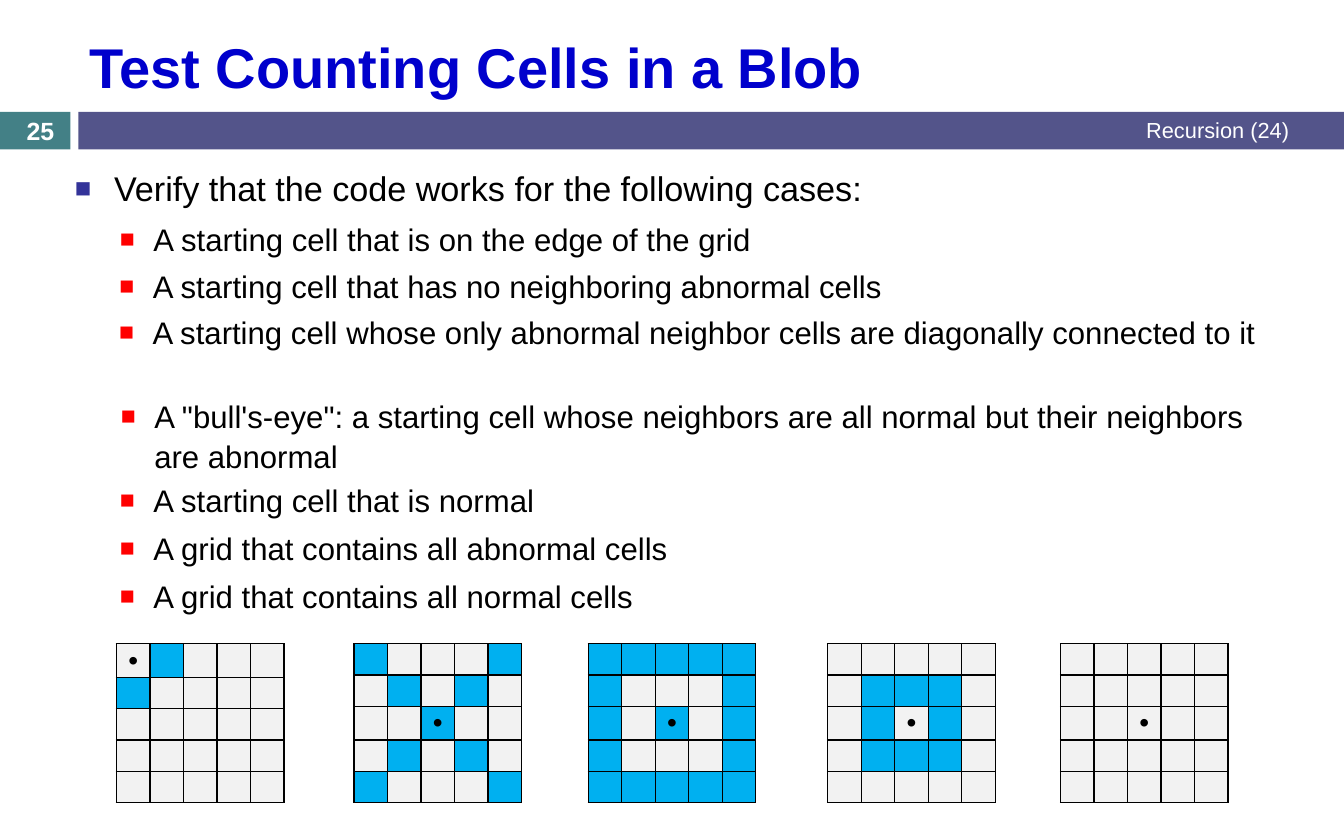
from typing import NamedTuple

from pptx import Presentation
from pptx.dml.color import RGBColor
from pptx.enum.shapes import MSO_SHAPE
from pptx.enum.text import MSO_ANCHOR, PP_ALIGN
from pptx.oxml import parse_xml
from pptx.oxml.ns import nsdecls
from pptx.util import Cm, Pt

FONT = "Arial"
BLACK, WHITE = "000000", "FFFFFF"
FILLS = {"#": "00B0F0", ".": "F2F2F2"}
SIDE = 5


class Box(NamedTuple):
    left: float
    top: float
    width: float
    height: float


class Style(NamedTuple):
    size: float
    color: str = BLACK
    bold: bool = False


class Level(NamedTuple):
    margin: float
    hang: float
    before: float
    color: str
    style: Style


class Block(NamedTuple):
    box: Box
    level: Level
    lines: list[str]


class Grid(NamedTuple):
    left: float
    rows: str
    start: tuple[int, int] = (2, 2)


MAIN = Level(0.89, 0.89, 7, "333399", Style(22))
SUB = Level(1.78, 0.76, 5.5, "FF0000", Style(20))

BLOCKS = [
    Block(Box(1.45, 3.61, 27.71, 1.24), MAIN,
          ["Verify that the code works for the following cases:"]),
    Block(Box(1.45, 4.83, 27.71, 1.07), SUB,
          ["A starting cell that is on the edge of the grid"]),
    Block(Box(1.44, 5.89, 27.71, 1.22), SUB,
          ["A starting cell that has no neighboring abnormal cells"]),
    Block(Box(1.43, 6.93, 27.71, 1.96), SUB,
          ["A starting cell whose only abnormal neighbor cells are "
           "diagonally connected to it"]),
    Block(Box(1.47, 8.84, 27.71, 1.96), SUB,
          ["A \"bull's-eye\": a starting cell whose neighbors are all "
           "normal but their neighbors are abnormal"]),
    Block(Box(1.45, 10.74, 27.71, 1.96), SUB,
          ["A starting cell that is normal",
           "A grid that contains all abnormal cells",
           "A grid that contains all normal cells"]),
]

# Each grid: "#" is an abnormal cell, "." a normal one
GRIDS = [
    Grid(2.64, ".#... #.... ..... ..... .....", (0, 0)),
    Grid(8.03, "#...# .#.#. ..#.. .#.#. #...#"),
    Grid(13.34, "##### #...# #.#.# #...# #####"),
    Grid(18.77, "..... .###. .#.#. .###. ....."),
    Grid(24.05, "..... ..... ..... ..... ....."),
]


def rgb(code: str) -> RGBColor:
    return RGBColor.from_string(code)


def dress(para, style: Style) -> None:
    for run in para.runs:
        font = run.font
        font.name, font.size, font.bold = FONT, Pt(style.size), style.bold
        font.color.rgb = rgb(style.color)


def add_bar(slide, box: Box, color: str) -> None:
    bar = slide.shapes.add_shape(MSO_SHAPE.RECTANGLE, *map(Cm, box))
    bar.shadow.inherit = False
    bar.fill.solid()
    bar.fill.fore_color.rgb = rgb(color)
    bar.line.fill.background()


def add_frame(slide, box: Box, text: str, anchor=MSO_ANCHOR.TOP):
    frame = slide.shapes.add_textbox(*map(Cm, box)).text_frame
    frame.word_wrap = True
    frame.vertical_anchor = anchor
    frame.text = text
    return frame


def add_label(slide, box: Box, text: str, style: Style, align) -> None:
    para = add_frame(slide, box, text, MSO_ANCHOR.MIDDLE).paragraphs[0]
    para.alignment = align
    dress(para, style)


def add_block(slide, block: Block) -> None:
    level = block.level
    frame = add_frame(slide, block.box, "\n".join(block.lines))
    for para in frame.paragraphs:
        para.level = int(level is SUB)
        para.line_spacing = 1.06
        para.space_before = Pt(level.before)
        props = para._p.get_or_add_pPr()
        props.set("marL", str(Cm(level.margin)))
        props.set("indent", str(-Cm(level.hang)))
        for part in (f'<a:buClr {nsdecls("a")}><a:srgbClr val="{level.color}"/></a:buClr>',
                     f'<a:buSzPct {nsdecls("a")} val="80000"/>',
                     f'<a:buFont {nsdecls("a")} typeface="{FONT}"/>',
                     f'<a:buChar {nsdecls("a")} char="■"/>'):
            props.append(parse_xml(part))
        dress(para, level.style)


def add_border(cell) -> None:
    props = cell._tc.get_or_add_tcPr()
    for side in "LRTB":
        props.append(parse_xml(
            f'<a:ln{side} {nsdecls("a")} w="{Pt(1)}"><a:solidFill>'
            f'<a:srgbClr val="{BLACK}"/></a:solidFill></a:ln{side}>'))


def add_grid(slide, grid: Grid) -> None:
    wide, high = Cm(0.76), Cm(0.71)
    table = slide.shapes.add_table(SIDE, SIDE, Cm(grid.left), Cm(14.6),
                                   wide * SIDE, high * SIDE).table
    for col in table.columns:
        col.width = wide
    for r, marks in enumerate(grid.rows.split()):
        table.rows[r].height = high
        for c, mark in enumerate(marks):
            cell = table.cell(r, c)
            cell.margin_left = cell.margin_right = 0
            cell.margin_top = cell.margin_bottom = 0
            cell.vertical_anchor = MSO_ANCHOR.MIDDLE
            add_border(cell)
            cell.fill.solid()
            cell.fill.fore_color.rgb = rgb(FILLS[mark])
            para = cell.text_frame.paragraphs[0]
            if (r, c) == grid.start:
                para.text = "•"
                para.alignment = PP_ALIGN.CENTER
                dress(para, Style(18))
            else:
                # Small type keeps blank rows from growing
                para._p.get_or_add_endParaRPr().set("sz", "1000")


def main() -> None:
    deck = Presentation()
    deck.slide_width, deck.slide_height = Cm(30.48), Cm(19.05)
    slide = deck.slides.add_slide(deck.slide_layouts[6])

    # Header band and title
    add_bar(slide, Box(0, 2.54, 1.6, 0.85), "438086")
    add_bar(slide, Box(1.78, 2.54, 28.7, 0.85), "53548A")
    add_label(slide, Box(1.78, 0.48, 27.71, 2.03), "Test Counting Cells in a Blob",
              Style(36, "0000CC", True), PP_ALIGN.LEFT)
    add_label(slide, Box(11.43, 2.51, 18.06, 0.89), "Recursion (24)",
              Style(14, WHITE), PP_ALIGN.RIGHT)
    add_label(slide, Box(0, 2.57, 1.83, 0.76), "25",
              Style(16, WHITE, True), PP_ALIGN.CENTER)

    # Test cases
    for block in BLOCKS:
        add_block(slide, block)

    # Sample grids
    for grid in GRIDS:
        add_grid(slide, grid)

    deck.save("out.pptx")


if __name__ == "__main__":
    main()
